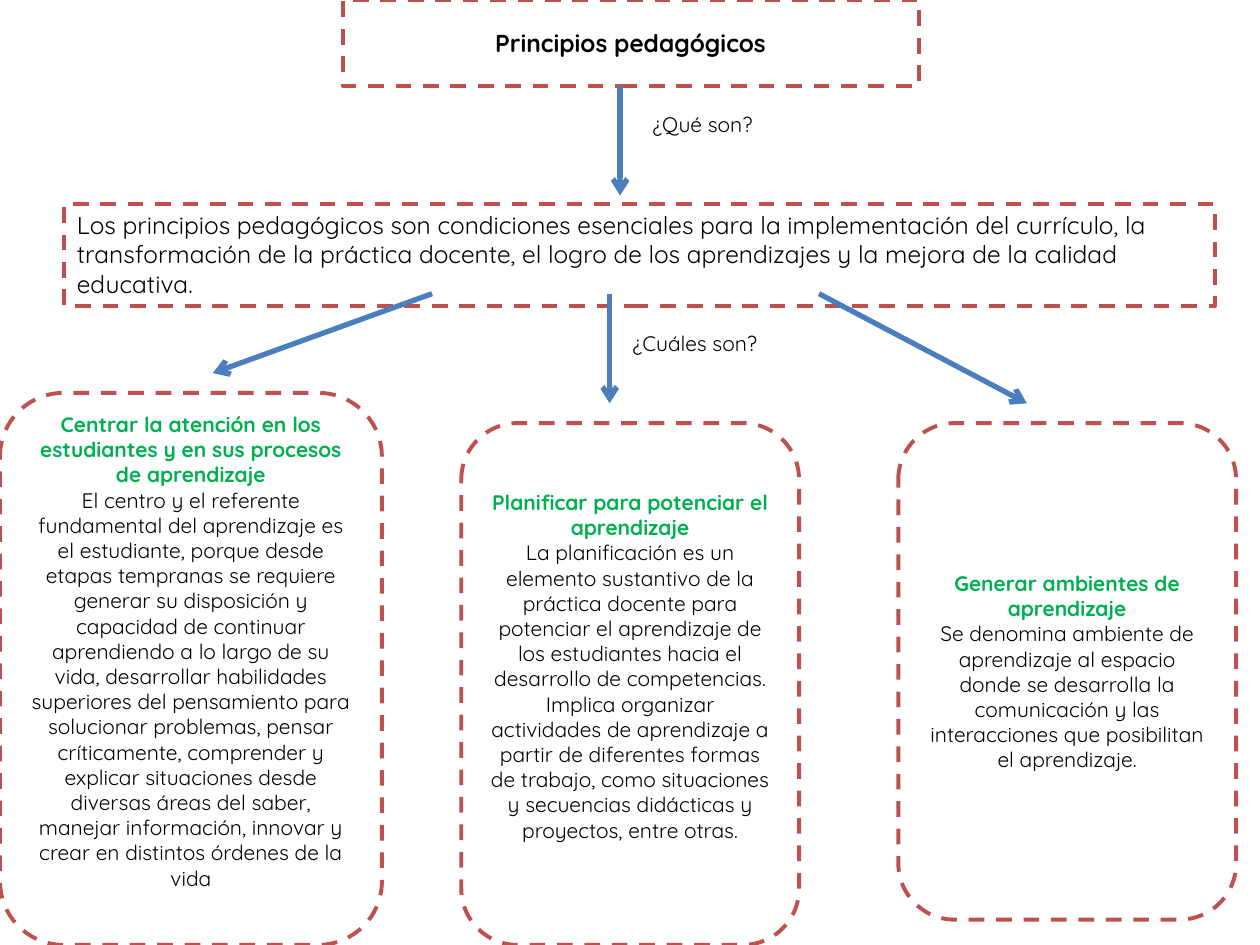
import pptx
import pptx.util
import pptx.dml.color
import pptx.enum.dml
import pptx.enum.shapes
import pptx.enum.text
import pptx.oxml.ns
import lxml.etree
from dataclasses import dataclass

Cm = pptx.util.Cm
Pt = pptx.util.Pt
RGB = pptx.dml.color.RGBColor
SHAPE = pptx.enum.shapes.MSO_SHAPE
ALIGN = pptx.enum.text.PP_ALIGN
ANCHOR = pptx.enum.text.MSO_ANCHOR


@dataclass(frozen=True)
class Theme:
    font: str = "Quicksand"
    text: RGB = RGB(0x00, 0x00, 0x00)
    heading: RGB = RGB(0x00, 0xB0, 0x50)
    fill: RGB = RGB(0xFF, 0xFF, 0xFF)
    border: RGB = RGB(0xC0, 0x50, 0x4D)
    arrow: RGB = RGB(0x4B, 0x7E, 0xBC)
    large: int = 14
    normal: int = 12
    border_width: float = 2.25
    arrow_width: float = 3


THEME = Theme()

# Cards: left, top, width, height, bottom inset (cm), heading, body
CARDS = [
    (0, 7.92, 7.7, 11.13, 0.85,
     "Centrar la atención en los estudiantes y en sus procesos de aprendizaje",
     "El centro y el referente fundamental del aprendizaje es el estudiante, "
     "porque desde etapas tempranas se requiere generar su disposición y "
     "capacidad de continuar aprendiendo a lo largo de su vida, desarrollar "
     "habilidades superiores del pensamiento para solucionar problemas, pensar "
     "críticamente, comprender y explicar situaciones desde diversas áreas del "
     "saber, manejar información, innovar y crear en distintos órdenes de la vida"),
    (9.3, 8.53, 6.81, 10.52, 0.85,
     "Planificar para potenciar el aprendizaje",
     "La planificación es un elemento sustantivo de la práctica docente para "
     "potenciar el aprendizaje de los estudiantes hacia el desarrollo de "
     "competencias. Implica organizar actividades de aprendizaje a partir de "
     "diferentes formas de trabajo, como situaciones y secuencias didácticas y "
     "proyectos, entre otras."),
    (18.11, 8.53, 6.81, 10.01, 0.13,
     "Generar ambientes de aprendizaje",
     "Se denomina ambiente de aprendizaje al espacio donde se desarrolla la "
     "comunicación y las interacciones que posibilitan el aprendizaje."),
]

# Arrows: start x, start y, end x, end y (cm)
ARROWS = [
    (12.5, 1.73, 12.5, 3.94),
    (12.29, 5.92, 12.29, 8.13),
    (8.71, 5.92, 4.29, 7.52),
    (16.51, 5.92, 20.7, 8.13),
]

# Questions: left, top (cm), text
QUESTIONS = [
    (12.9, 2.13, "¿Qué son?"),
    (12.5, 6.53, "¿Cuáles son?"),
]


def write_paragraph(p, text, size, color=THEME.text, bold=False, align=ALIGN.LEFT):
    p.text = text
    p.alignment = align
    for r in p.runs:
        r.font.name = THEME.font
        r.font.size = Pt(size)
        r.font.bold = bold
        r.font.color.rgb = color


def add_dashed_box(s, kind, left, top, width, height, anchor=ANCHOR.MIDDLE):
    sp = s.shapes.add_shape(kind, Cm(left), Cm(top), Cm(width), Cm(height))
    sp.shadow.inherit = False
    sp.fill.solid()
    sp.fill.fore_color.rgb = THEME.fill
    sp.line.color.rgb = THEME.border
    sp.line.width = Pt(THEME.border_width)
    sp.line.dash_style = pptx.enum.dml.MSO_LINE.DASH
    tf = sp.text_frame
    tf.word_wrap = True
    tf.vertical_anchor = anchor
    return tf


def add_card(s, left, top, width, height, bottom, heading, body):
    tf = add_dashed_box(s, SHAPE.ROUNDED_RECTANGLE, left, top, width, height)
    tf.margin_bottom = Cm(bottom)
    write_paragraph(tf.paragraphs[0], heading, THEME.normal, THEME.heading,
                    True, ALIGN.CENTER)
    write_paragraph(tf.add_paragraph(), body, THEME.normal, align=ALIGN.CENTER)


def add_question(s, left, top, text):
    tf = s.shapes.add_textbox(Cm(left), Cm(top), Cm(3.4), Cm(0.77)).text_frame
    tf.word_wrap = True
    write_paragraph(tf.paragraphs[0], text, THEME.normal)


def add_arrow(s, x1, y1, x2, y2):
    line = s.shapes.add_connector(pptx.enum.shapes.MSO_CONNECTOR.STRAIGHT,
                                  Cm(x1), Cm(y1), Cm(x2), Cm(y2))
    line.line.color.rgb = THEME.arrow
    line.line.width = Pt(THEME.arrow_width)
    qn = pptx.oxml.ns.qn
    ln = line.line._get_or_add_ln()
    lxml.etree.SubElement(ln, qn("a:tailEnd"), type="arrow")
    lxml.etree.SubElement(ln.getparent(), qn("a:effectLst"))


def main():
    prs = pptx.Presentation()
    prs.slide_width, prs.slide_height = Cm(25.4), Cm(19.05)
    s = prs.slides.add_slide(prs.slide_layouts[6])

    # Title
    tf = add_dashed_box(s, SHAPE.RECTANGLE, 6.91, 0, 11.61, 1.73)
    write_paragraph(tf.paragraphs[0], "Principios pedagógicos", THEME.large,
                    bold=True, align=ALIGN.CENTER)

    # Definition
    tf = add_dashed_box(s, SHAPE.RECTANGLE, 1.3, 4.11, 23.19, 2.06, ANCHOR.TOP)
    write_paragraph(
        tf.paragraphs[0],
        "Los principios pedagógicos son condiciones esenciales para la "
        "implementación del currículo, la transformación de la práctica docente, "
        "el logro de los aprendizajes y la mejora de la calidad educativa.",
        THEME.large)

    # Arrows and the questions beside them
    for arrow in ARROWS:
        add_arrow(s, *arrow)
    for question in QUESTIONS:
        add_question(s, *question)

    # Principles
    for card in CARDS:
        add_card(s, *card)

    prs.save("out.pptx")


if __name__ == "__main__":
    main()
